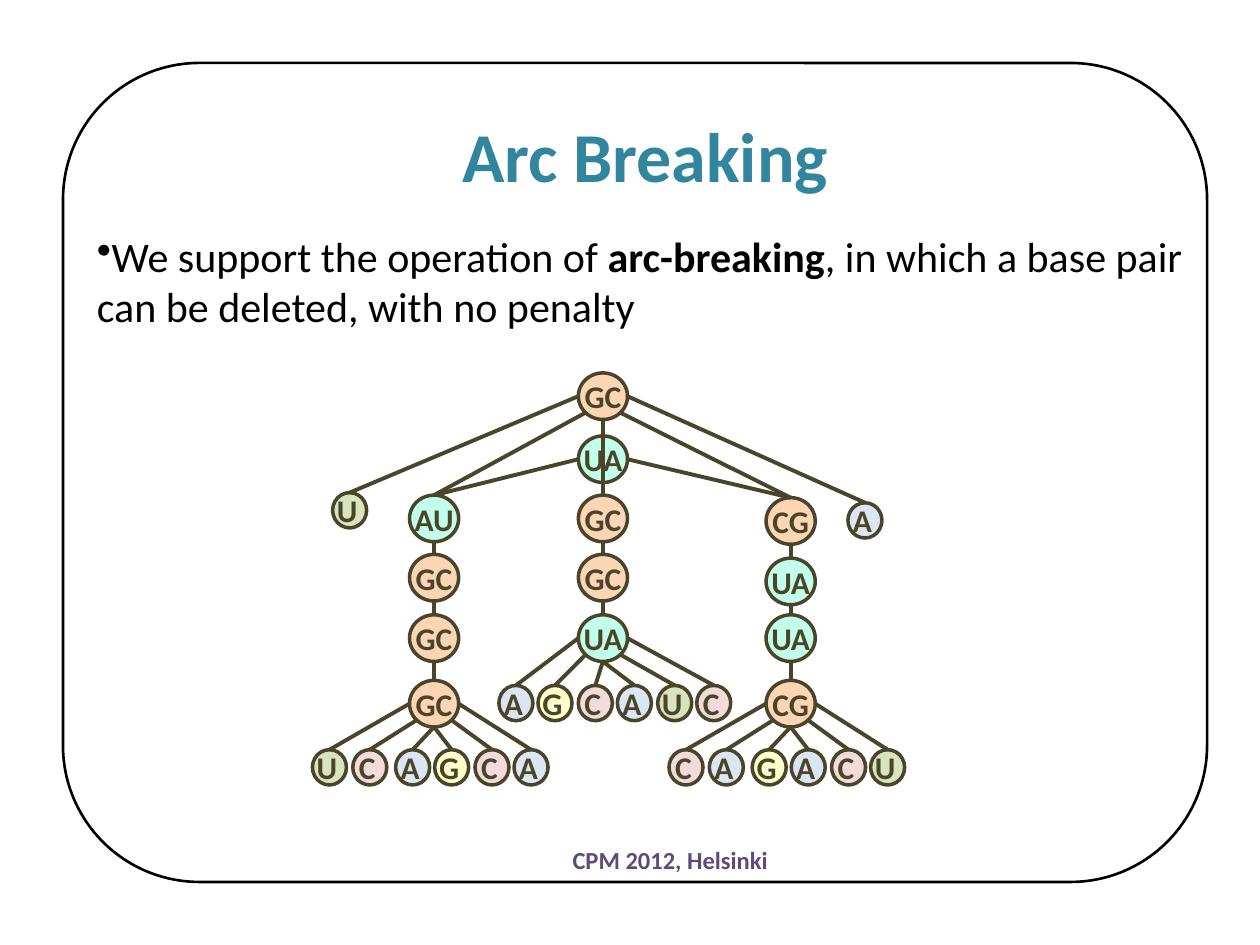
"""Draw the arc-breaking slide: a tree of base pairs whose loops end in single bases."""
from dataclasses import dataclass
from itertools import pairwise

from lxml import etree
from pptx import Presentation
from pptx import util as u
from pptx.dml.color import RGBColor
from pptx.enum import shapes, text
from pptx.oxml import ns

INK = RGBColor(0x4A, 0x45, 0x2A)
BLACK = RGBColor(0, 0, 0)
TEAL = RGBColor(0x31, 0x85, 0x9C)
PURPLE = RGBColor(0x60, 0x4A, 0x7B)
ORANGE = RGBColor(0xFC, 0xD5, 0xB5)
MINT = RGBColor(0xC1, 0xFF, 0xEA)
GREEN = RGBColor(0xD7, 0xE4, 0xBD)
BLUE = RGBColor(0xDC, 0xE6, 0xF2)
PINK = RGBColor(0xF2, 0xDC, 0xDB)
YELLOW = RGBColor(0xFF, 0xFF, 0xCC)
FILLS = {"GC": ORANGE, "CG": ORANGE, "UA": MINT, "AU": MINT,
         "U": GREEN, "A": BLUE, "C": PINK, "G": YELLOW}
PAIR_SIZE = (0.39, 0.37)
BASE_SIZE = (0.27, 0.28)
PORTS = {"left": (0, 0.5), "lower left": (0.15, 0.85), "bottom": (0.5, 1),
         "lower right": (0.85, 0.85), "right": (1, 0.5), "top": (0.5, 0)}
LOOP_PORTS = ("left", "lower left", "bottom", "bottom", "lower right", "right")
ROOT_PORTS = ("left", "lower left", "bottom", "lower right", "right")
WIDE_LOOP = (-0.77, -0.45, -0.11, 0.2, 0.52, 0.83)
EVEN_LOOP = (-0.63, -0.32, 0, 0.31, 0.63, 0.94)


@dataclass(frozen=True)
class Node:
    label: str
    left: float
    top: float

    @property
    def size(self) -> tuple[float, float]:
        return PAIR_SIZE if len(self.label) == 2 else BASE_SIZE

    def port(self, name: str) -> tuple[float, float]:
        across, down = PORTS[name]
        width, height = self.size
        return self.left + across * width, self.top + down * height


@dataclass(frozen=True)
class Stem:
    left: float
    pairs: dict[float, str]
    loop: str
    loop_top: float
    loop_offsets: tuple[float, ...]

    def nodes(self) -> list[Node]:
        return [Node(label, self.left, top) for top, label in self.pairs.items()]

    def bases(self) -> list[Node]:
        return [Node(label, self.left + offset, self.loop_top)
                for label, offset in zip(self.loop, self.loop_offsets)]


@dataclass(frozen=True)
class Caption:
    box: tuple[float, float, float, float]
    runs: tuple[tuple[str, bool], ...]
    size: int
    color: RGBColor
    centered: bool = True
    bullet: str = ""


STEMS = (
    Stem(3.25, {3.93: "AU", 4.4: "GC", 4.88: "GC", 5.4: "GC"}, "UCAGCA", 5.95, WIDE_LOOP),
    Stem(4.59, {2.96: "GC", 3.46: "UA", 3.93: "GC", 4.4: "GC", 4.88: "UA"},
         "AGCAUC", 5.44, EVEN_LOOP),
    Stem(6.08, {3.95: "CG", 4.43: "UA", 4.88: "UA", 5.4: "CG"}, "CAGACU", 5.95, WIDE_LOOP),
)
CAPTIONS = (
    Caption((0.83, 0.84, 8.58, 0.77), (("Arc Breaking", True),), 40, TEAL),
    Caption((0.67, 1.78, 8.82, 1.31),
            (("We support the operation of ", False), ("arc-breaking", True),
             (", in which a base pair can be deleted, with no penalty", False)),
            24, BLACK, centered=False, bullet="•"),
    Caption((2.17, 6.66, 6.3, 0.34), (("CPM 2012, Helsinki", True),), 14, PURPLE),
)


def add_run(paragraph, wording: str, size: int, color: RGBColor, bold: bool) -> None:
    run = paragraph.add_run()
    run.text = wording
    for name, value in {"name": "Calibri", "size": u.Pt(size), "bold": bold}.items():
        setattr(run.font, name, value)
    run.font.color.rgb = color


def add_frame(slide) -> None:
    shape = slide.shapes.add_shape(shapes.MSO_SHAPE.ROUNDED_RECTANGLE,
                                   *map(u.Inches, (0.5, 0.5, 9.08, 6.5)))
    shape.shadow.inherit = False
    shape.fill.background()
    shape.line.color.rgb = BLACK
    shape.line.width = u.Pt(1.5)


def add_caption(slide, caption: Caption) -> None:
    frame = slide.shapes.add_textbox(*map(u.Inches, caption.box)).text_frame
    frame.word_wrap = True
    frame.auto_size = text.MSO_AUTO_SIZE.SHAPE_TO_FIT_TEXT
    paragraph = frame.paragraphs[0]
    paragraph.alignment = text.PP_ALIGN.CENTER if caption.centered else text.PP_ALIGN.LEFT
    if caption.bullet:
        properties = paragraph._p.get_or_add_pPr()
        etree.SubElement(properties, ns.qn("a:buChar")).set("char", caption.bullet)
    for wording, bold in caption.runs:
        add_run(paragraph, wording, caption.size, caption.color, bold)


def add_node(slide, node: Node) -> None:
    shape = slide.shapes.add_shape(shapes.MSO_SHAPE.OVAL,
                                   *map(u.Inches, (node.left, node.top, *node.size)))
    shape.shadow.inherit = False
    shape.fill.solid()
    shape.fill.fore_color.rgb = FILLS[node.label]
    shape.line.color.rgb = INK
    shape.line.width = u.Pt(2)
    layout = {"margin_left": 0, "margin_top": 0, "margin_bottom": 0,
              "margin_right": u.Inches(0 if len(node.label) == 2 else 0.04),
              "word_wrap": False, "vertical_anchor": text.MSO_ANCHOR.MIDDLE}
    for name, value in layout.items():
        setattr(shape.text_frame, name, value)
    paragraph = shape.text_frame.paragraphs[0]
    paragraph.alignment = text.PP_ALIGN.CENTER
    paragraph._p.get_or_add_pPr().set("rtl", "1")
    add_run(paragraph, node.label, 18, INK, True)


def add_link(slide, parent: Node, port: str, child: Node) -> None:
    ends = (*parent.port(port), *child.port("top"))
    connector = slide.shapes.add_connector(shapes.MSO_CONNECTOR.STRAIGHT, *map(u.Inches, ends))
    connector.line.color.rgb = INK
    connector.line.width = u.Pt(2.25)
    etree.SubElement(connector._element.spPr, ns.qn("a:effectLst"))


def add_fan(slide, parent: Node, ports: tuple[str, ...], children: list[Node]) -> None:
    for port, child in zip(ports, children):
        add_link(slide, parent, port, child)


def add_stem(slide, stem: Stem) -> None:
    nodes, bases = stem.nodes(), stem.bases()
    for node in nodes + bases:
        add_node(slide, node)
    for upper, lower in pairwise(nodes):
        add_link(slide, upper, "bottom", lower)
    add_fan(slide, nodes[-1], LOOP_PORTS, bases)


def main() -> None:
    presentation = Presentation()
    presentation.slide_width, presentation.slide_height = u.Inches(10), u.Inches(7.5)
    slide = presentation.slides.add_slide(presentation.slide_layouts[6])
    add_frame(slide)
    for caption in CAPTIONS:
        add_caption(slide, caption)
    for stem in STEMS:
        add_stem(slide, stem)
    left_nodes, middle_nodes, right_nodes = (stem.nodes() for stem in STEMS)
    root, junction, middle = middle_nodes[:3]
    outer_left, outer_right = Node("U", 2.64, 3.91), Node("A", 6.73, 3.99)
    for base in (outer_left, outer_right):
        add_node(slide, base)
    add_fan(slide, junction, ("left", "right"), [left_nodes[0], right_nodes[0]])
    add_fan(slide, root, ROOT_PORTS,
            [outer_left, left_nodes[0], middle, right_nodes[0], outer_right])
    presentation.save("out.pptx")


if __name__ == "__main__":
    main()
